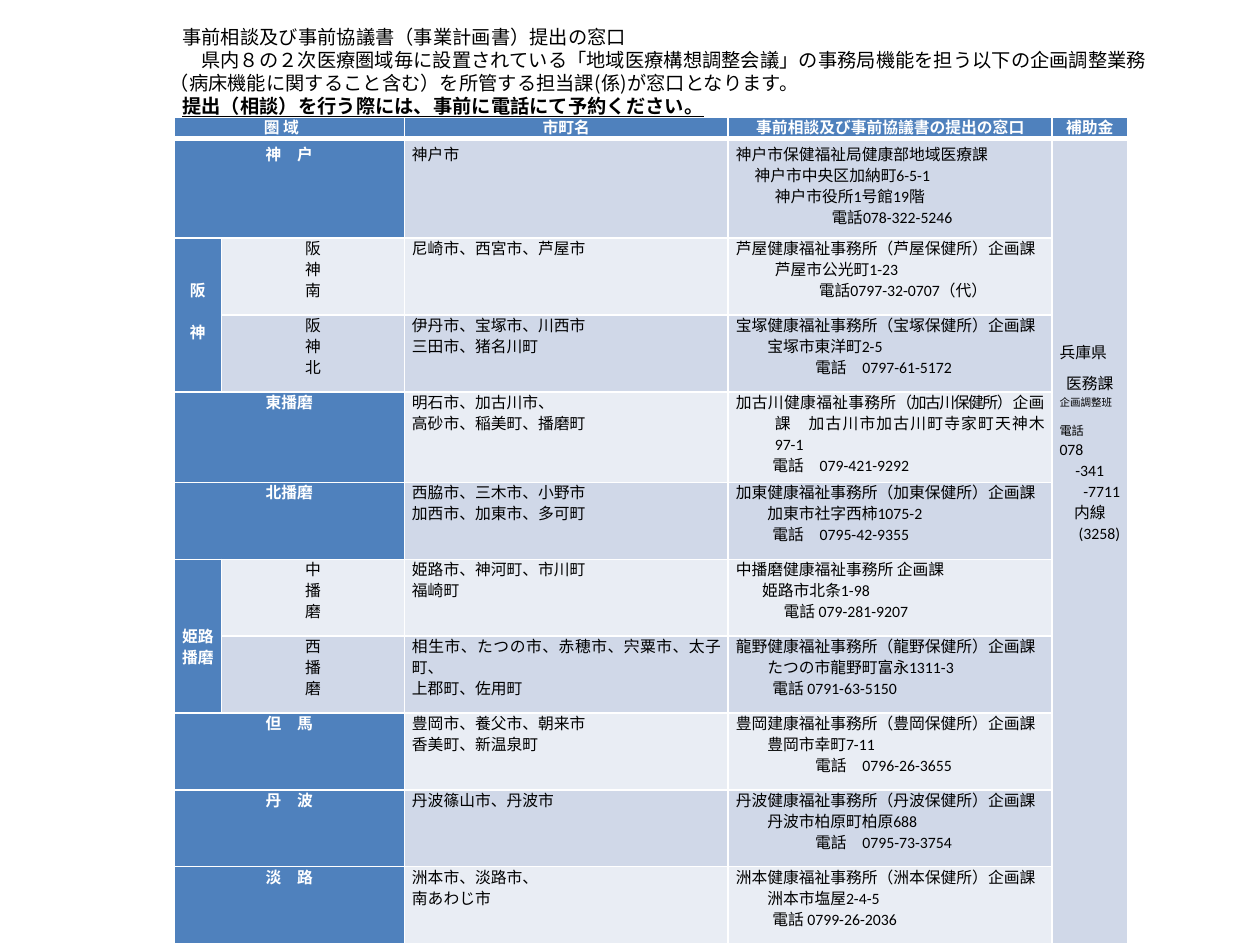
from lxml.etree import SubElement
from pptx import Presentation
from pptx.dml.color import RGBColor
from pptx.enum.text import MSO_ANCHOR, PP_ALIGN
from pptx.oxml.ns import qn
from pptx.util import Inches, Pt

COLOURS = {"head": "4F81BD", "dark_band": "D0D8E8", "light_band": "E9EDF4",
           "white": "FFFFFF", "black": "000000"}
LATIN, JAPANESE = "Calibri", "Noto Sans CJK JP"
LEFT, CENTRE, RIGHT, JUSTIFY = (PP_ALIGN.LEFT, PP_ALIGN.CENTER,
                                PP_ALIGN.RIGHT, PP_ALIGN.JUSTIFY)

SLIDE_SIZE = (10, 7.5)
INTRO_BOX = (0.073, 0.02, 0.853, 0.152)      # shares of the slide
TABLE_BOX = (0.138, 0.124, 0.757, 0.875)
COLUMN_WEIGHTS = [0.38, 1.45, 2.57, 2.57, 0.6]
ROW_WEIGHTS = [0.17, 0.79, 0.61, 0.61, 0.72] + [0.61] * 6

# Intro lines: text, indent in inches, emphasised
INTRO = [
    ("事前相談及び事前協議書（事業計画書）提出の窓口", 0.62, False),
    ("県内８の２次医療圏域毎に設置されている「地域医療構想調整会議」の事務局機能を担う以下の企画調整業務", 0.77, False),
    ("（病床機能に関すること含む）を所管する担当課(係)が窓口となります。", 0.52, False),
    ("提出（相談）を行う際には、事前に電話にて予約ください。", 0.62, True),
]
HEADINGS = {0: "圏 域　", 2: "市町名", 3: "事前相談及び事前協議書の提出の窓口", 4: "補助金"}

# Area, towns, and the office lines with their indents; "|" encloses condensed text
DISTRICTS = [
    ("神　戸", ["神戸市"],
     [("神戸市保健福祉局健康部地域医療課", 0), ("神戸市中央区加納町6-5-1", 0.15),
      ("神戸市役所1号館19階", 0.31), ("電話078-322-5246", 0.76)]),
    ("阪神南", ["尼崎市、西宮市、芦屋市"],
     [("芦屋健康福祉事務所（芦屋保健所）企画課", 0), ("芦屋市公光町1-23", 0.31),
      ("電話0797-32-0707（代）", 0.66)]),
    ("阪神北", ["伊丹市、宝塚市、川西市", "三田市、猪名川町"],
     [("宝塚健康福祉事務所（宝塚保健所）企画課", 0), ("宝塚市東洋町2-5", 0.25),
      ("電話　0797-61-5172", 0.63)]),
    ("東播磨", ["明石市、加古川市、", "高砂市、稲美町、播磨町"],
     [("加古川健康福祉事務所|（加古川保健所）|企画課　加古川市加古川町寺家町天神木97-1", -0.31),
      ("電話　079-421-9292", 0.29)]),
    ("北播磨", ["西脇市、三木市、小野市", "加西市、加東市、多可町"],
     [("加東健康福祉事務所（加東保健所）企画課", 0), ("加東市社字西柿1075-2", 0.25),
      ("電話　0795-42-9355", 0.29)]),
    ("中播磨", ["姫路市、神河町、市川町", "福崎町"],
     [("中播磨健康福祉事務所 企画課", 0), ("姫路市北条1-98", 0.21),
      ("電話 079-281-9207", 0.38)]),
    ("西播磨", ["相生市、たつの市、赤穂市、宍粟市、太子町、", "上郡町、佐用町"],
     [("龍野健康福祉事務所（龍野保健所）企画課", 0), ("たつの市龍野町富永1311-3", 0.25),
      ("電話 0791-63-5150", 0.29)]),
    ("但　馬", ["豊岡市、養父市、朝来市", "香美町、新温泉町"],
     [("豊岡建康福祉事務所（豊岡保健所）企画課", 0), ("豊岡市幸町7-11", 0.25),
      ("電話　0796-26-3655", 0.63)]),
    ("丹　波", ["丹波篠山市、丹波市"],
     [("丹波健康福祉事務所（丹波保健所）企画課", 0), ("丹波市柏原町柏原688", 0.25),
      ("電話　0795-73-3754", 0.63)]),
    ("淡　路", ["洲本市、淡路市、", "南あわじ市"],
     [("洲本健康福祉事務所（洲本保健所）企画課", 0), ("洲本市塩屋2-4-5", 0.25),
      ("電話 0799-26-2036", 0.29)]),
]
# First row of a joined area: lines with the space before each, top margin, anchor
JOINED_AREAS = {
    2: ([("阪", 0), ("神", 12)], 0.33, MSO_ANCHOR.TOP),
    6: ([("姫路播磨", 0)], 0.17, MSO_ANCHOR.MIDDLE),
}
# Subsidy contact: text, alignment, size, line spacing, space before
SUBSIDY = [
    ("兵庫県", LEFT, 9, 18, 0), ("医務課", CENTRE, 9, 18, 0),
    ("企画調整班", LEFT, 6, None, 0), ("電話", LEFT, 7, 12, 5),
    ("078", LEFT, 9, 12, 0), ("-341", CENTRE, 9, 12, 0), ("-7711", RIGHT, 9, 12, 0),
    ("内線", CENTRE, 9, 12, 0), ("(3258)", RIGHT, 9, 12, 0),
]


def set_all(target, values):
    for name, value in values.items():
        setattr(target, name, value)


def write_line(frame, text, first, size=9, colour="black", bold=False, underline=False,
               align=LEFT, spacing=12, before=0, indent=0, latin=LATIN):
    """Add one paragraph; a negative indent hangs the first line."""
    line = frame.paragraphs[0] if first else frame.add_paragraph()
    set_all(line, {"alignment": align, "space_before": Pt(before),
                   "line_spacing": Pt(spacing) if spacing else None})
    margins = {"marL": abs(indent), "indent": min(indent, 0)}
    for name, value in margins.items():
        line._p.get_or_add_pPr().set(name, str(Inches(value)))
    for position, piece in enumerate(text.split("|")):
        run = line.add_run()
        run.text = piece
        set_all(run.font, {"size": Pt(size), "bold": bold, "underline": underline,
                           "name": latin})
        run.font.color.rgb = RGBColor.from_string(COLOURS[colour])
        properties = run.font._element
        SubElement(properties, qn("a:ea")).set("typeface", JAPANESE)
        if position % 2:
            properties.set("spc", "-100")


def style_cell(cell, fill, header=False):
    set_all(cell, {"margin_left": Inches(0.06), "margin_right": Inches(0.06),
                   "margin_top": 0, "margin_bottom": 0})
    for side in "LRTB":
        width = 3 if header and side == "B" else 1
        border = SubElement(cell._tc.get_or_add_tcPr(), qn(f"a:ln{side}"), w=str(Pt(width)))
        paint = SubElement(border, qn("a:solidFill"))
        SubElement(paint, qn("a:srgbClr"), val=COLOURS["white"])
    cell.fill.solid()
    cell.fill.fore_color.rgb = RGBColor.from_string(COLOURS[fill])


def fill_cell(cell, lines, **shared):
    """Write lines given as (text, format values)."""
    for number, (text, values) in enumerate(lines):
        write_line(cell.text_frame, text, number == 0, **{**shared, **values})


def add_intro(slide, box):
    frame = slide.shapes.add_textbox(*box).text_frame
    set_all(frame, {"word_wrap": True, "vertical_anchor": MSO_ANCHOR.TOP})
    for number, (text, indent, strong) in enumerate(INTRO):
        write_line(frame, text, number == 0, size=11, bold=strong, underline=strong,
                   spacing=13.2, indent=indent, latin=JAPANESE)


def add_contact_table(slide, box):
    table = slide.shapes.add_table(len(ROW_WEIGHTS), len(COLUMN_WEIGHTS), *box).table
    for column, weight in zip(table.columns, COLUMN_WEIGHTS):
        column.width = int(box[2] * weight / sum(COLUMN_WEIGHTS))
    for row, weight in zip(table.rows, ROW_WEIGHTS):
        row.height = int(box[3] * weight / sum(ROW_WEIGHTS))
    heading = {"colour": "white", "bold": True, "align": CENTRE}

    # Header row
    for column in range(len(COLUMN_WEIGHTS)):
        style_cell(table.cell(0, column), "head", header=True)
    table.cell(0, 0).merge(table.cell(0, 1))
    for column, text in HEADINGS.items():
        fill_cell(table.cell(0, column), [(text, {})], **heading)

    # One row for each district
    for row, (area, towns, office) in enumerate(DISTRICTS, start=1):
        band = "dark_band" if row % 2 else "light_band"
        joined = row in JOINED_AREAS or row - 1 in JOINED_AREAS
        spacing = 15 if row == 1 else 12
        fills = ["head", band if joined else "head", band, band, "dark_band"]
        for column, fill in enumerate(fills):
            style_cell(table.cell(row, column), fill)
        if joined:
            fill_cell(table.cell(row, 1), [(sign, {}) for sign in area], align=CENTRE)
        else:
            table.cell(row, 0).merge(table.cell(row, 1))
            fill_cell(table.cell(row, 0), [(area, {})], spacing=spacing, **heading)
        fill_cell(table.cell(row, 2), [(town, {}) for town in towns],
                  align=JUSTIFY, spacing=spacing)
        fill_cell(table.cell(row, 3),
                  [(text, {"indent": indent, "spacing": 12 if number else spacing})
                   for number, (text, indent) in enumerate(office)], align=JUSTIFY)

    # Areas that join two districts
    for row, (lines, margin, anchor) in JOINED_AREAS.items():
        area_cell = table.cell(row, 0)
        area_cell.merge(table.cell(row + 1, 0))
        set_all(area_cell, {"margin_top": Inches(margin), "vertical_anchor": anchor})
        fill_cell(area_cell, [(text, {"before": before}) for text, before in lines], **heading)

    # Subsidy contact beside all districts
    subsidy_cell = table.cell(1, 4)
    subsidy_cell.merge(table.cell(len(DISTRICTS), 4))
    subsidy_cell.margin_top = Inches(1.53)
    names = ("align", "size", "spacing", "before")
    fill_cell(subsidy_cell, [(text, dict(zip(names, values))) for text, *values in SUBSIDY])


def main():
    deck = Presentation()
    width, height = (Inches(side) for side in SLIDE_SIZE)
    set_all(deck, {"slide_width": width, "slide_height": height})
    slide = deck.slides.add_slide(deck.slide_layouts[6])
    for draw, shares in ((add_contact_table, TABLE_BOX), (add_intro, INTRO_BOX)):
        draw(slide, [int(share * side) for share, side in zip(shares, (width, height) * 2)])
    deck.save("out.pptx")


if __name__ == "__main__":
    main()
